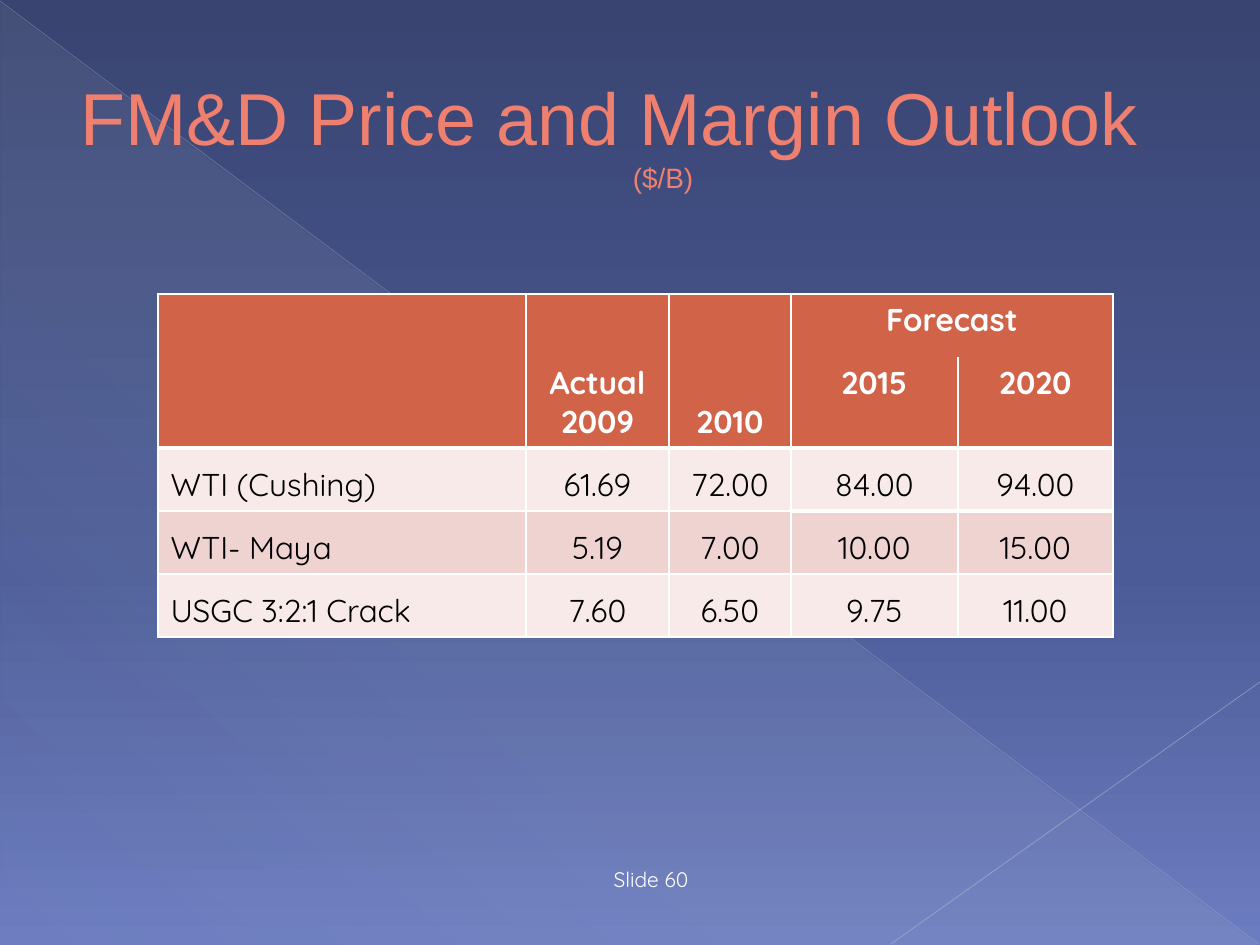
from pptx import Presentation, util as u
from pptx.dml.color import RGBColor
from pptx.enum import shapes, text
from pptx.oxml import parse_xml
from pptx.oxml.ns import nsdecls, qn

PX = 914400 // 126
WHITE, HEADER = "FFFFFF", "D16349"
BANDS = ["F7EAE9", "EED3D0"]
COLUMNS = [368, 143, 122, 167, 155]
ROW_HEIGHTS = [63, 91, 63, 63, 63]
ROWS = [
    ["", "Actual\n2009", "2010", "Forecast", ""],
    ["", "", "", "2015", "2020"],
    ["WTI (Cushing)", "61.69", "72.00", "84.00", "94.00"],
    ["WTI- Maya", "5.19", "7.00", "10.00", "15.00"],
    ["USGC 3:2:1 Crack", "7.60", "6.50", "9.75", "11.00"],
]


def px(*lengths):
    return [u.Emu(n * PX) for n in lengths]


def rgb(value):
    return RGBColor.from_string(value)


def set_font(font, name, size, color, bold=False):
    font.name, font.size, font.bold = name, u.Pt(size), bold
    font.color.rgb = rgb(color)


def set_gradient(fill, element, stops, angle):
    """Fill with (position %, colour, opacity %) stops, angle clockwise."""
    fill.solid()
    solid = element.find(".//" + qn("a:solidFill"))
    marks = "".join(
        f'<a:gs pos="{pos * 1000}"><a:srgbClr val="{color}">'
        f'<a:alpha val="{alpha * 1000}"/></a:srgbClr></a:gs>'
        for pos, color, alpha in stops)
    solid.getparent().replace(solid, parse_xml(
        f'<a:gradFill {nsdecls("a")} rotWithShape="1"><a:gsLst>{marks}</a:gsLst>'
        f'<a:lin ang="{angle * 60000}" scaled="0"/></a:gradFill>'))


def add_triangle(s, box):
    sp = s.shapes.add_shape(shapes.MSO_SHAPE.RIGHT_TRIANGLE, *px(*box))
    sp.shadow.inherit = False
    sp.line.fill.background()
    set_gradient(sp.fill, sp._element.spPr,
                 [(0, "C5D1D7", 10), (70, "C5D1D7", 8), (100, "C5D1D7", 1)], 133)


def add_line(s, ends, color, width, opacity):
    line = s.shapes.add_connector(shapes.MSO_CONNECTOR.STRAIGHT, *px(*ends))
    line.line.width = u.Pt(width)
    line.line.color.rgb = rgb(color)
    spPr = line._element.spPr
    spPr.find(".//" + qn("a:srgbClr")).append(
        parse_xml(f'<a:alpha {nsdecls("a")} val="{opacity * 1000}"/>'))
    spPr.append(parse_xml(f'<a:effectLst {nsdecls("a")}/>'))


def add_text(s, box, anchor):
    """Add a wrapping text box and return its frame and centred paragraph."""
    tf = s.shapes.add_textbox(*px(*box)).text_frame
    tf.word_wrap, tf.vertical_anchor = True, anchor
    p = tf.paragraphs[0]
    p.alignment = text.PP_ALIGN.CENTER
    return tf, p


def add_title(s):
    tf, p = add_text(s, (0, 37, 1260, 192), text.MSO_ANCHOR.MIDDLE)
    tf.margin_right, hanging = px(54, 108)
    pPr = p._p.get_or_add_pPr()
    pPr.set("marL", str(hanging))
    pPr.set("indent", str(-hanging))
    for i, (words, size) in enumerate([("FM&D Price and Margin Outlook", 42),
                                       ("($/B)", 16)]):
        if i:
            p.add_line_break()
        r = p.add_run()
        r.text = words
        set_font(r.font, "Arial", size, "EF7F6E")


def add_footer(s):
    _, p = add_text(s, (504, 857, 294, 41), text.MSO_ANCHOR.BOTTOM)
    p.text = "Slide 60"
    set_font(p.font, "Quicksand", 12, WHITE)


def rule_width(row, col):
    """Width in points of the horizontal rule above a cell."""
    if row == 1:
        return 0
    return 3 if row == 2 or (row == 3 and col >= 3) else 1


def set_borders(cell, row, col):
    widths = {"L": 1, "R": 1, "T": rule_width(row, col),
              "B": rule_width(row + cell.span_height, col)}
    tcPr = cell._tc.get_or_add_tcPr()
    for i, (side, width) in enumerate(widths.items()):
        paint = (f'<a:solidFill><a:srgbClr val="{WHITE}"/></a:solidFill>'
                 if width else "<a:noFill/>")
        tcPr.insert(i, parse_xml(
            f'<a:ln{side} {nsdecls("a")} w="{u.Pt(width)}">{paint}</a:ln{side}>'))


def style_cell(cell, row, col, words):
    is_header = row < 2
    cell.fill.solid()
    cell.fill.fore_color.rgb = rgb(HEADER if is_header else BANDS[row % 2])
    if cell.is_spanned:
        return
    set_borders(cell, row, col)
    on_top = is_header and col >= 3
    cell.vertical_anchor = text.MSO_ANCHOR.TOP if on_top else text.MSO_ANCHOR.BOTTOM
    cell.text = words
    for p in cell.text_frame.paragraphs:
        p.alignment = text.PP_ALIGN.CENTER if col else text.PP_ALIGN.LEFT
        set_font(p.font, "Quicksand", 18, WHITE if is_header else "000000", is_header)


def add_price_table(s):
    frame = s.shapes.add_table(
        len(ROWS), len(COLUMNS), *px(158, 294, sum(COLUMNS), sum(ROW_HEIGHTS)))
    table = frame.table
    for column, width in zip(table.columns, px(*COLUMNS)):
        column.width = width
    for row, height in zip(table.rows, px(*ROW_HEIGHTS)):
        row.height = height
    for col in range(3):
        table.cell(0, col).merge(table.cell(1, col))
    table.cell(0, 3).merge(table.cell(0, 4))
    for row, values in enumerate(ROWS):
        for col, words in enumerate(values):
            style_cell(table.cell(row, col), row, col, words)


def main():
    prs = Presentation()
    prs.slide_width, prs.slide_height = px(1260, 945)
    s = prs.slides.add_slide(prs.slide_layouts[6])
    set_gradient(s.background.fill, s._element,
                 [(0, "394471", 100), (60, "4B5B97", 100), (100, "6C7CC0", 100)], 90)
    add_triangle(s, (1, 3, 1257, 942))
    add_line(s, (0, 1, 1259, 944), "BABECD", 0.39, 35)
    add_line(s, (1260, 682, 891, 944), "C2C5D2", 0.47, 45)
    add_title(s)
    add_footer(s)
    add_price_table(s)
    prs.save("out.pptx")


if __name__ == "__main__":
    main()
